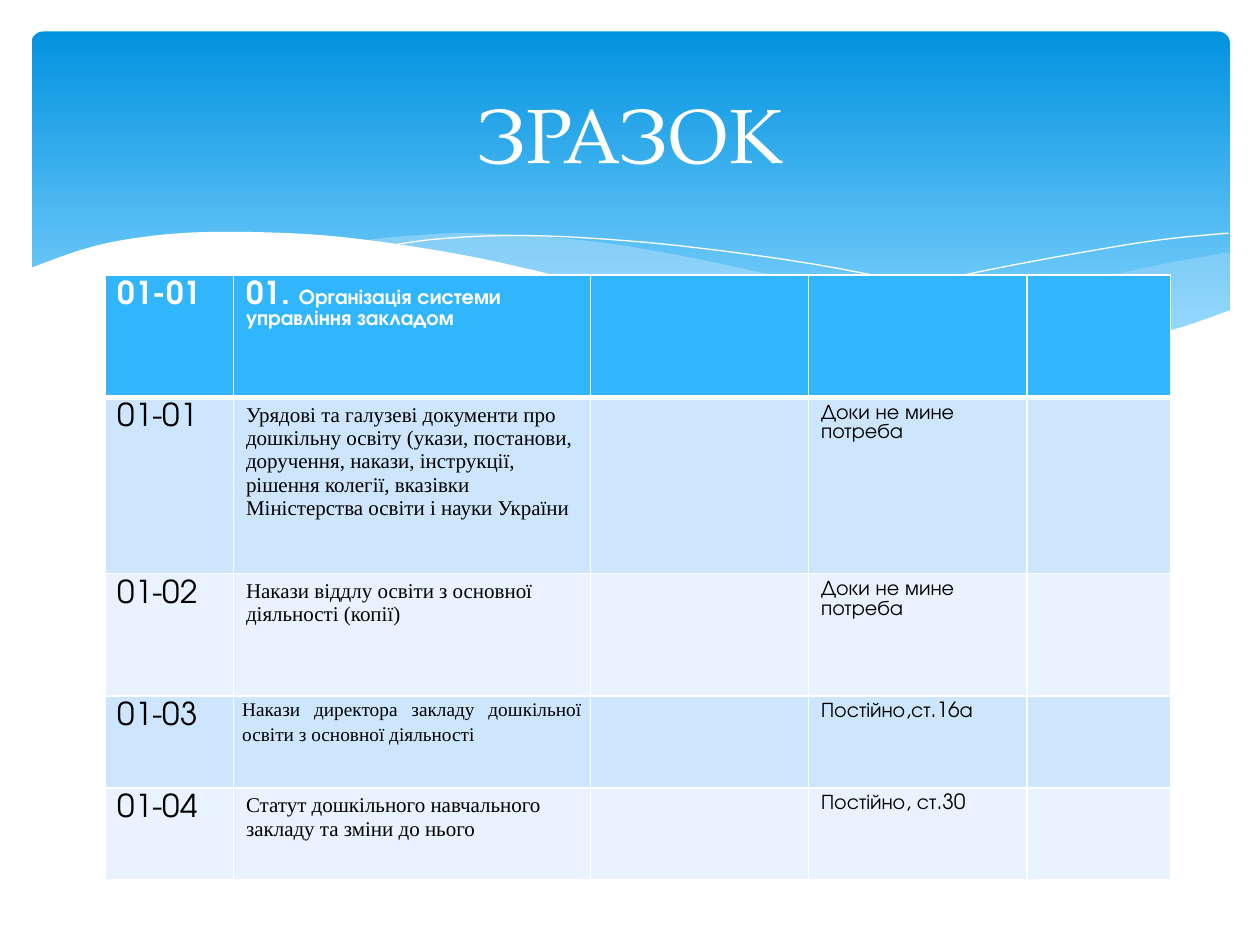
from pptx import Presentation
from pptx.dml.color import RGBColor
from pptx.enum.shapes import MSO_SHAPE
from pptx.enum.text import MSO_ANCHOR, PP_ALIGN
from pptx.oxml import parse_xml
from pptx.oxml.ns import nsdecls, qn
from pptx.util import Pt
from lxml.etree import SubElement

COLORS = {
    "white": "FFFFFF", "black": "000000", "sky_top": "0293E0", "sky_low": "83D3FE",
    "wave": "C6E7FC", "head": "31B6FD", "odd": "CEE5FE", "even": "E8F3FF",
}
SANS, SERIF, TITLE = "TeX Gyre Adventor", "Times New Roman", "TeX Gyre Pagella"


def smooth(knots, steps=6):
    ends = [knots[0], *knots, knots[-1]]
    points = [knots[0]]
    for a, b, c, d in zip(ends, ends[1:], ends[2:], ends[3:]):
        for i in range(1, steps + 1):
            t = i / steps
            points.append(tuple(
                (2 * q + (r - p) * t + (2 * p - 5 * q + 4 * r - s) * t ** 2
                 + (3 * q - p - 3 * r + s) * t ** 3) / 2
                for p, q, r, s in zip(a, b, c, d)))
    return points


class Deck:
    def __init__(self, width, height):
        self.prs = Presentation()
        self.prs.slide_width, self.prs.slide_height = Pt(width), Pt(height)
        self.s = self.prs.slides.add_slide(self.prs.slide_layouts[6])

    def color(self, name):
        return RGBColor.from_string(COLORS[name])

    def font(self, p, name, size, color, bold=False):
        p.font.name, p.font.size, p.font.bold = name, Pt(size), bold
        p.font.color.rgb = self.color(color)

    def panel(self, x, y, w, h, radius, top, low):
        sp = self.s.shapes.add_shape(MSO_SHAPE.ROUNDED_RECTANGLE, Pt(x), Pt(y), Pt(w), Pt(h))
        sp.adjustments[0] = radius
        sp.shadow.inherit = False
        sp.line.fill.background()
        sp.fill.gradient()
        sp.fill.gradient_angle = 270
        for stop, name, pos in zip(sp.fill.gradient_stops, (top, low), (0, 0.9)):
            stop.color.rgb, stop.position = self.color(name), pos

    def outline(self, points, closed):
        points = [(x * 100, y * 100) for x, y in points]
        fb = self.s.shapes.build_freeform(*points[0], scale=Pt(0.01))
        fb.add_line_segments(points[1:], close=closed)
        sp = fb.convert_to_shape()
        sp.shadow.inherit = False
        return sp

    def area(self, points, color, alpha=100):
        sp = self.outline(points, True)
        sp.line.fill.background()
        sp.fill.solid()
        sp.fill.fore_color.rgb = self.color(color)
        if alpha < 100:
            clr = sp.fill._xPr.find(qn("a:solidFill"))[0]
            SubElement(clr, qn("a:alpha")).set("val", str(alpha * 1000))

    def curve(self, knots, color):
        sp = self.outline(smooth(knots), False)
        sp.fill.background()
        sp.line.color.rgb = self.color(color)
        sp.line.width = Pt(0)

    def title(self, text, x, y, w, h):
        tf = self.s.shapes.add_textbox(Pt(x), Pt(y), Pt(w), Pt(h)).text_frame
        tf.word_wrap, tf.vertical_anchor = True, MSO_ANCHOR.MIDDLE
        p = tf.paragraphs[0]
        p.text, p.alignment = text, PP_ALIGN.CENTER
        self.font(p, TITLE, 44, "white")

    def cell(self, cell, text, fill, font, size, color, bold=False):
        cell.fill.solid()
        cell.fill.fore_color.rgb = self.color(fill)
        p = cell.text_frame.paragraphs[0]
        p.text = text
        self.font(p, font, size, color, bold)
        return p

    def borders(self, cell, widths):
        tcPr = cell._tc.get_or_add_tcPr()
        for i, (side, width) in enumerate(zip("LRTB", widths)):
            tcPr.insert(i, parse_xml(
                f'<a:ln{side} {nsdecls("a")} w="{Pt(width)}"><a:solidFill>'
                f'<a:srgbClr val="{COLORS["white"]}"/></a:solidFill></a:ln{side}>'))

    def table(self, x, y, widths, heights, head, rows):
        tbl = self.s.shapes.add_table(
            len(heights), len(widths), Pt(x), Pt(y), Pt(sum(widths)), Pt(sum(heights))).table
        for col, width in zip(tbl.columns, widths):
            col.width = Pt(width)
        for row, height in zip(tbl.rows, heights):
            row.height = Pt(height)
        for c, text in enumerate(head):
            self.cell(tbl.cell(0, c), text, "head", SANS, 18, "white", True)
            self.borders(tbl.cell(0, c), (1, 1, 1, 3))
        for r, (code, name, term) in enumerate(rows, 1):
            fill = "odd" if r % 2 else "even"
            for c, text in enumerate((code, name, "", term, "")):
                font, size = SERIF if c == 1 else SANS, 12 if c else 18
                self.cell(tbl.cell(r, c), text, fill, font, size, "black")
                self.borders(tbl.cell(r, c), (1, 1, 3 if r == 1 else 1, 1))
        return tbl


def main():
    deck = Deck(720, 540)
    deck.panel(18, 18, 684.7, 194.4, 0.034, "sky_top", "sky_low")
    right_top = [(702.7, 144), (663, 151.2), (620, 160.6), (542, 178.6), (476, 190.8)]
    right_low = [(476, 190.8), (527, 197.3), (578, 200.2), (628, 197.3), (668, 189.4),
                 (702.7, 177.8)]
    deck.area(smooth(right_top) + smooth(right_low), "wave", 29)
    mid_top = [(643, 196.6), (581, 187.2), (508, 172.8), (453, 159.8), (389.5, 146.2),
               (335, 137.5), (273.6, 133.2), (236, 134.6), (206, 137.5)]
    mid_low = [(206, 137.5), (260.6, 146.2), (323, 159.8), (381.6, 172.8), (445, 185.8),
               (500, 194.4), (548, 199.4), (589, 200.2), (643, 196.6)]
    deck.area(smooth(mid_top) + smooth(mid_low), "wave", 40)
    deck.curve([(222.5, 140.4), (247.7, 136.8), (288.7, 134.6), (337.7, 136.1), (400, 141.8),
                (479, 153.4), (572, 173.5), (653, 195.8)], "white")
    deck.curve([(441.4, 185), (500, 169.2), (558.7, 155.5), (623.5, 143.3), (665, 136.8),
                (702, 133.2)], "white")
    front = [(703.4, 177.1), (669.6, 188.6), (630, 196.6), (582.5, 199.4), (522.7, 195.8),
             (450.7, 185.8), (381, 172.1), (322, 158.4), (263, 145.4), (195, 135.4),
             (139, 132.5), (95, 133.9), (54.7, 140.4), (16.6, 153.4)]
    deck.area(smooth(front) + [(16.6, 236.9), (703.4, 236.9)], "white")

    tbl = deck.table(
        60, 157, [73.4, 204, 124.7, 124.7, 82], [70, 100.8, 70, 52.4, 52.4],
        ["01-01", "01. ", "", "", ""],
        [("01-01", "Урядові та галузеві документи про дошкільну освіту (укази, постанови, "
          "доручення, накази, інструкції, рішення колегії, вказівки Міністерства освіти "
          "і науки України", "Доки не мине потреба"),
         ("01-02", "Накази віддлу освіти з основної діяльності (копії)",
          "Доки не мине потреба"),
         ("01-03", "Накази директора закладу дошкільної освіти з основної діяльності",
          "Постійно,ст.16а"),
         ("01-04", "Статут дошкільного навчального закладу та зміни до нього",
          "Постійно, ст.30")])
    r = tbl.cell(0, 1).text_frame.paragraphs[0].add_run()
    r.text, r.font.size = "Організація системи управління закладом", Pt(12)
    orders = tbl.cell(3, 1)
    orders.margin_left = orders.margin_right = Pt(5)
    orders.margin_top = orders.margin_bottom = Pt(0)
    p = orders.text_frame.paragraphs[0]
    p.alignment, p.line_spacing, p.space_after = PP_ALIGN.JUSTIFY, 1.15, Pt(10)
    p.font.size = Pt(11)

    deck.title("ЗРАЗОК", 36, 26.6, 648, 98.6)
    deck.prs.save("out.pptx")


if __name__ == "__main__":
    main()
